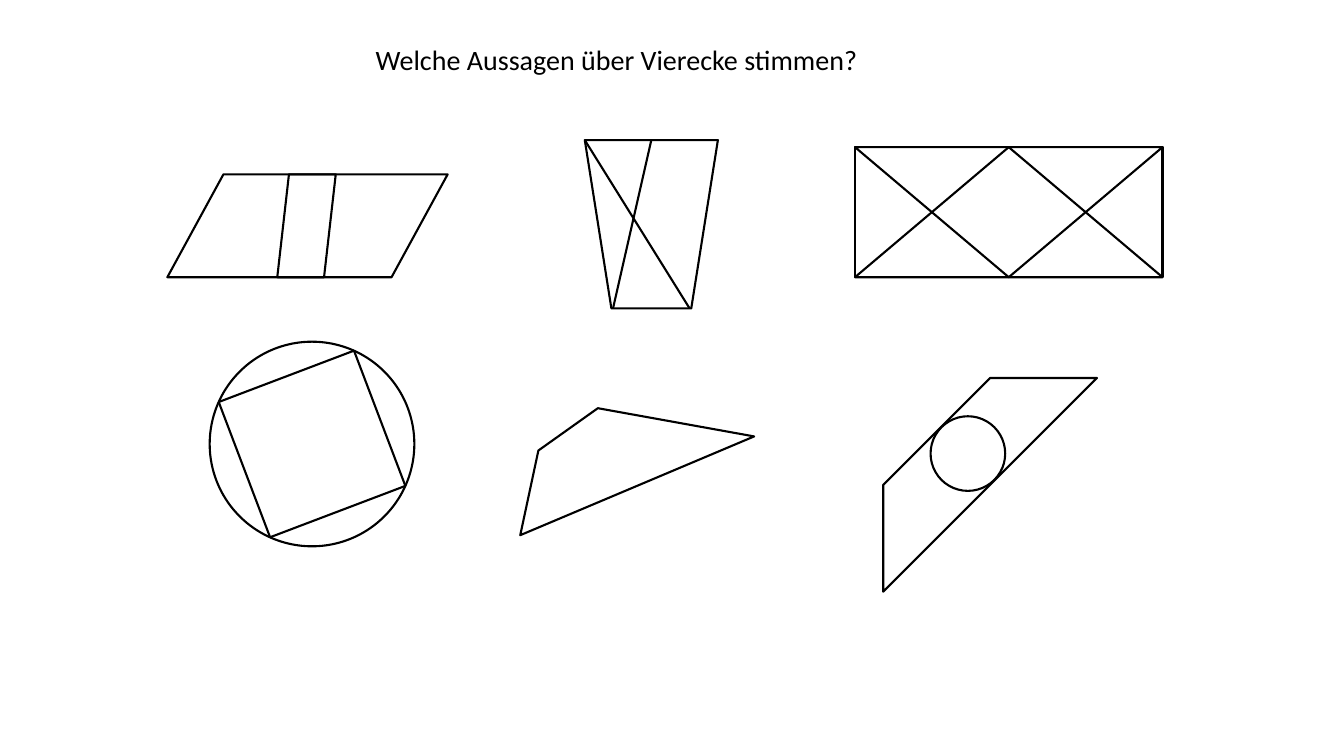
"""Build a slide of quadrilateral figures under the question which statements hold."""
from lxml import etree
from pptx import Presentation
from pptx.dml.color import RGBColor
from pptx.enum.shapes import MSO_CONNECTOR, MSO_SHAPE
from pptx.enum.text import PP_ALIGN
from pptx.oxml.ns import qn
from pptx.util import Inches, Pt

BLACK = RGBColor(0x00, 0x00, 0x00)
ELLIPSE = MSO_SHAPE.OVAL
DIAMOND = MSO_SHAPE.DIAMOND
PARALLELOGRAM = MSO_SHAPE.FLOWCHART_DATA
STRIPE = MSO_SHAPE.DIAGONAL_STRIPE
TRAPEZOID = MSO_SHAPE.FLOWCHART_MANUAL_OPERATION
RECTANGLE = MSO_SHAPE.FLOWCHART_PROCESS
TRIANGLE = MSO_SHAPE.ISOSCELES_TRIANGLE
STRAIGHT = MSO_CONNECTOR.STRAIGHT
CENTER = PP_ALIGN.CENTER

CIRCUMCIRCLE = (2.08, 3.39, 2.03, 2.03)
CROSSED_RECTANGLE = (8.48, 1.46, 3.05, 1.29)
KITE = [(5.16, 5.31), (7.48, 4.33), (5.93, 4.05), (5.34, 4.47)]
FIGURES = [
    (ELLIPSE, CIRCUMCIRCLE, 0),
    (DIAMOND, CIRCUMCIRCLE, 24.2),
    (PARALLELOGRAM, (1.66, 1.73, 2.78, 1.02), 0),
    (PARALLELOGRAM, (2.75, 1.73, 0.58, 1.02), 0),
    (STRIPE, (8.76, 3.75, 2.12, 2.12), 0),
    (ELLIPSE, (9.23, 4.13, 0.74, 0.74), 0),
    (TRAPEZOID, (5.8, 1.39, 1.32, 1.67), 0),
    (RECTANGLE, CROSSED_RECTANGLE, 0),
    (TRIANGLE, CROSSED_RECTANGLE, 0),
    (TRIANGLE, CROSSED_RECTANGLE, 180),
]
TRAPEZOID_LINES = [(5.8, 1.39, 6.84, 3.06), (6.46, 1.39, 6.08, 3.06)]


def draw_outline(figure):
    figure.shadow.inherit = False
    figure.fill.background()
    figure.line.color.rgb = BLACK
    figure.line.width = Pt(1.5)


deck = Presentation()
deck.slide_width, deck.slide_height = Inches(13.33), Inches(7.5)
page = deck.slides.add_slide(deck.slide_layouts[6])

corners = [(Inches(x), Inches(y)) for x, y in KITE]
builder = page.shapes.build_freeform(*corners[0])
builder.add_line_segments(corners[1:], close=True)
draw_outline(builder.convert_to_shape())

for kind, frame, angle in FIGURES:
    figure = page.shapes.add_shape(kind, *map(Inches, frame))
    figure.rotation = angle
    draw_outline(figure)

for ends in TRAPEZOID_LINES:
    segment = page.shapes.add_connector(STRAIGHT, *map(Inches, ends))
    segment.line.color.rgb = BLACK
    segment.line.width = Pt(1.5)
    etree.SubElement(segment._element.spPr, qn("a:effectLst"))

box = page.shapes.add_textbox(Inches(1.86), Inches(0.37), Inches(8.51), Inches(0.44))
box.text_frame.word_wrap = True
para = box.text_frame.paragraphs[0]
para.text = "Welche Aussagen über Vierecke stimmen?"
para.alignment = CENTER
span = para.runs[0]
span.font.name = "Calibri"
span.font.size = Pt(20)
span.font.color.rgb = BLACK

deck.save("out.pptx")
